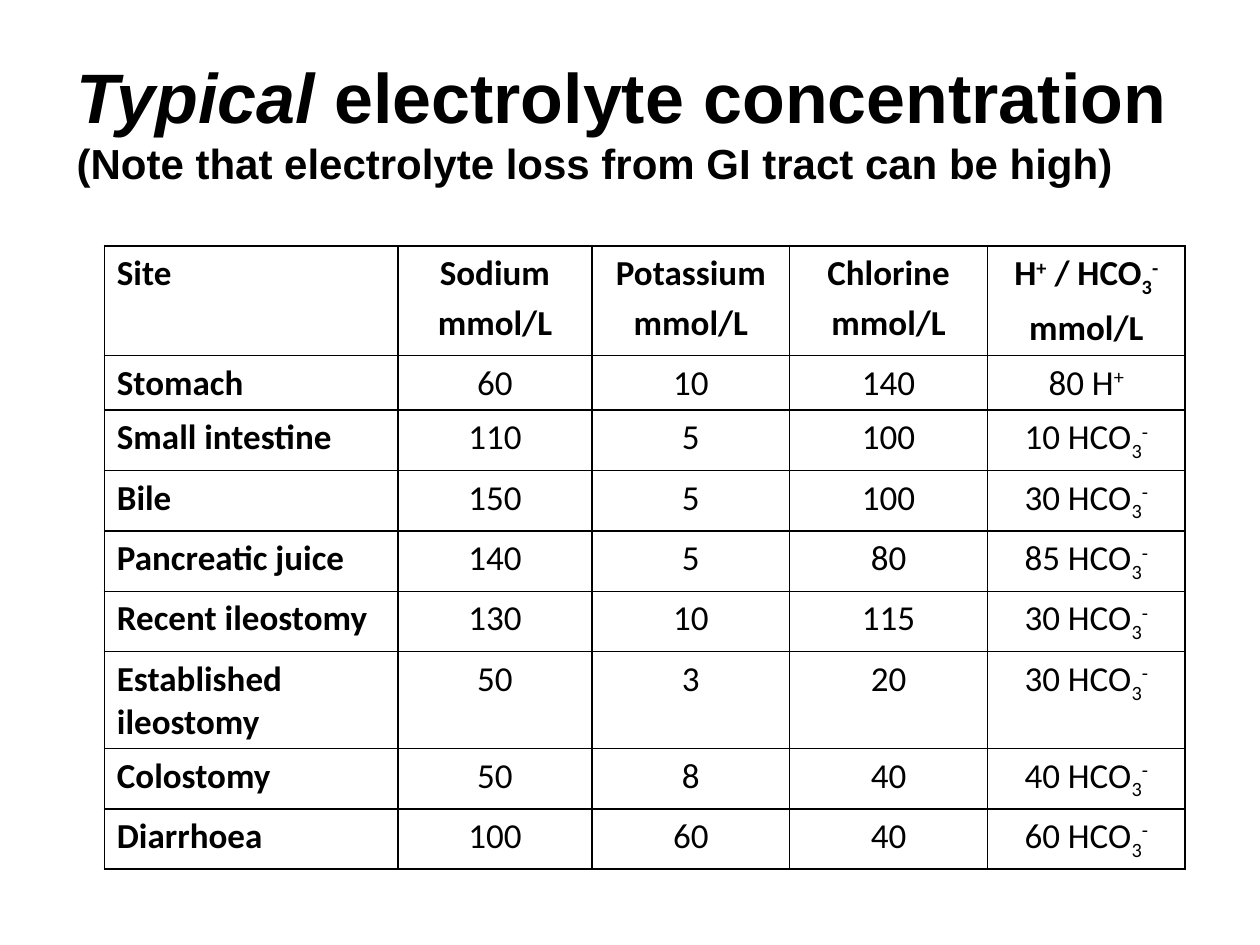
import pptx
import pptx.util
import pptx.dml.color
import pptx.enum.text
import pptx.oxml.ns
from dataclasses import dataclass
from lxml import etree

Pt = pptx.util.Pt
RGB = pptx.dml.color.RGBColor
Align = pptx.enum.text.PP_ALIGN
Anchor = pptx.enum.text.MSO_ANCHOR
qn = pptx.oxml.ns.qn


@dataclass
class Theme:
    ink: str = "000000"
    title_font: str = "Arial"
    table_font: str = "Calibri"
    title_size: int = 40
    note_size: int = 24
    table_size: int = 20
    border: int = 1


class Builder:
    def __init__(self, s, theme):
        self.s = s
        self.theme = theme

    def run(self, p, text, font, size, bold=True, italic=False, baseline=0):
        r = p.add_run()
        r.text = text
        r.font.name = font
        r.font.size = Pt(size)
        r.font.bold = bold
        r.font.italic = italic
        r.font.color.rgb = RGB.from_string(self.theme.ink)
        if baseline:
            r.font._element.set("baseline", str(baseline))

    def title(self, x, y, w, h, emphasis, rest, note):
        t = self.theme
        tf = self.s.shapes.add_textbox(Pt(x), Pt(y), Pt(w), Pt(h)).text_frame
        tf.word_wrap = True
        tf.auto_size = pptx.enum.text.MSO_AUTO_SIZE.SHAPE_TO_FIT_TEXT
        tf.vertical_anchor = Anchor.BOTTOM
        p = tf.paragraphs[0]
        self.run(p, emphasis, t.title_font, t.title_size, italic=True)
        self.run(p, rest, t.title_font, t.title_size)
        self.run(tf.add_paragraph(), note, t.title_font, t.note_size)

    def formula(self, p, text, bold):
        """Write text in which ^ raises and _ lowers the next character."""
        parts, shift = [], 0
        for ch in text:
            if ch in "^_":
                shift = 30000 if ch == "^" else -25000
                continue
            if parts and parts[-1][1] == shift:
                parts[-1][0] += ch
            else:
                parts.append([ch, shift])
            shift = 0
        for piece, baseline in parts:
            self.run(p, piece, self.theme.table_font, self.theme.table_size,
                     bold, baseline=baseline)

    def borders(self, cell):
        tcPr = cell._tc.get_or_add_tcPr()
        for i, side in enumerate(("lnL", "lnR", "lnT", "lnB")):
            ln = etree.Element(qn(f"a:{side}"), w=str(Pt(self.theme.border)))
            fill = etree.SubElement(ln, qn("a:solidFill"))
            etree.SubElement(fill, qn("a:srgbClr"), val=self.theme.ink)
            tcPr.insert(i, ln)

    def cell(self, cell, text, bold, centred):
        cell.fill.background()
        self.borders(cell)
        tf = cell.text_frame
        for i, line in enumerate(text.split("\n")):
            p = tf.add_paragraph() if i else tf.paragraphs[0]
            p.alignment = Align.CENTER if centred else Align.LEFT
            # Spacing relative to the line needs XML
            before = etree.SubElement(p._p.get_or_add_pPr(), qn("a:spcBef"))
            etree.SubElement(before, qn("a:spcPct"), val="20000")
            self.formula(p, line, bold)

    def table(self, x, y, h, widths, head_height, row_height, rows):
        frame = self.s.shapes.add_table(len(rows), len(widths), Pt(x), Pt(y),
                                        Pt(sum(widths)), Pt(h))
        table = frame.table
        table.first_row = table.horz_banding = False
        for column, width in zip(table.columns, widths):
            column.width = Pt(width)
        for i, row in enumerate(rows):
            table.rows[i].height = Pt(row_height if i else head_height)
            for j, text in enumerate(row):
                self.cell(table.cell(i, j), text, i == 0 or j == 0, j > 0)
        frame.height = Pt(h)


ROWS = [
    ("Site", "Sodium\nmmol/L", "Potassium\nmmol/L", "Chlorine\nmmol/L",
     "H^+ / HCO_3^-\nmmol/L"),
    ("Stomach", "60", "10", "140", "80 H^+"),
    ("Small intestine", "110", "5", "100", "10 HCO_3^-"),
    ("Bile", "150", "5", "100", "30 HCO_3^-"),
    ("Pancreatic juice", "140", "5", "80", "85 HCO_3^-"),
    ("Recent ileostomy", "130", "10", "115", "30 HCO_3^-"),
    ("Established ileostomy", "50", "3", "20", "30 HCO_3^-"),
    ("Colostomy", "50", "8", "40", "40 HCO_3^-"),
    ("Diarrhoea", "100", "60", "40", "60 HCO_3^-"),
]


def main():
    prs = pptx.Presentation()
    prs.slide_width, prs.slide_height = Pt(720), Pt(540)
    b = Builder(prs.slides.add_slide(prs.slide_layouts[6]), Theme())

    # Heading
    b.title(36.7, 26, 646.5, 85, "Typical", " electrolyte concentration",
            "(Note that electrolyte loss from GI tract can be high)")

    # Concentrations by site; rows grow to fit their text
    b.table(59.6, 140.5, 333.4, [167.8, 110.9, 113, 113, 113], 32.4, 21.6, ROWS)

    prs.save("out.pptx")


if __name__ == "__main__":
    main()
